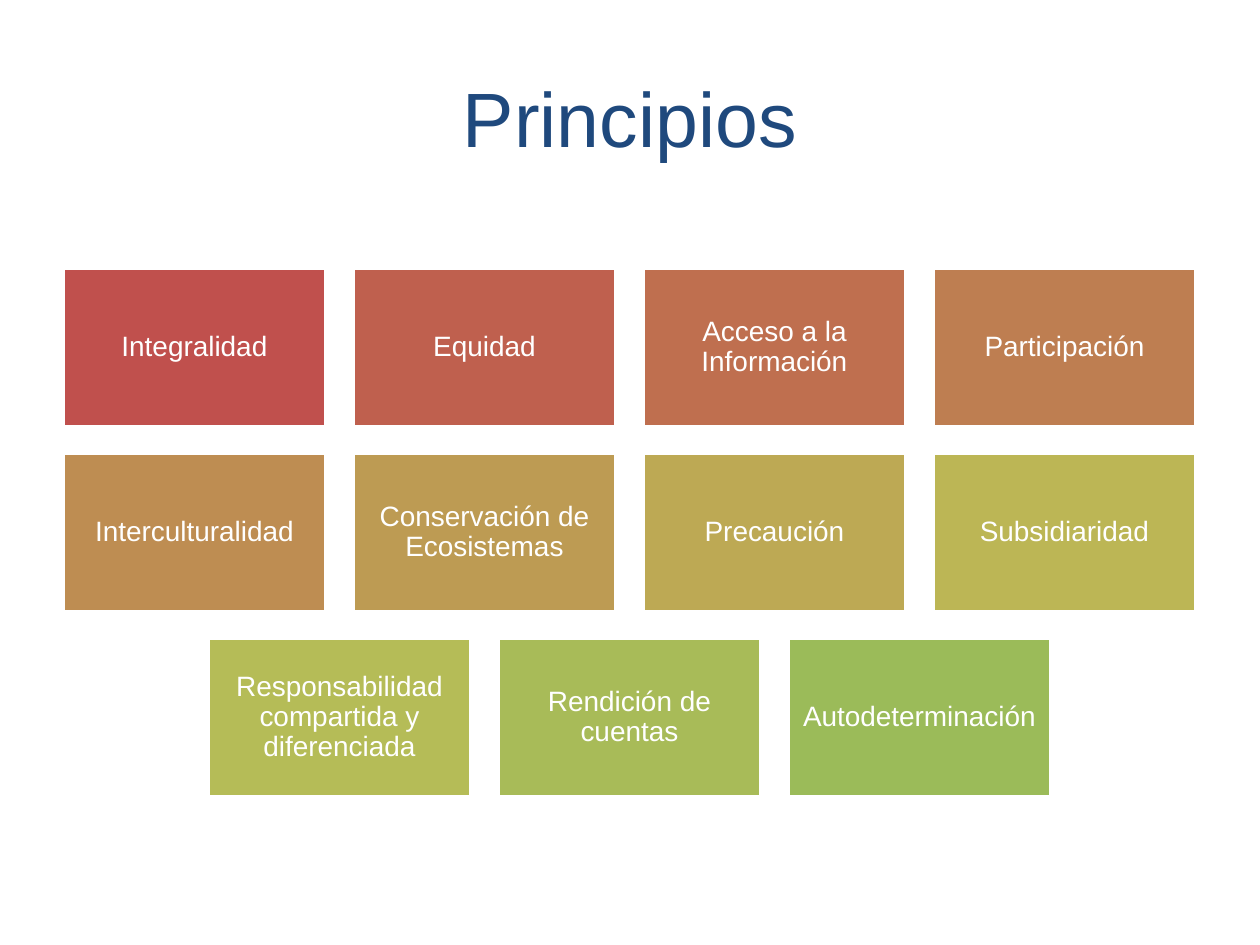
from pptx import Presentation
from pptx import util as u
from pptx.dml import color
from pptx.enum import shapes, text

EMU_PER_PX = 914400 / 126
SLIDE_WIDTH, SLIDE_HEIGHT = 1260, 945
TILE_WIDTH, TILE_HEIGHT = 263, 159
COLUMN_STEP, ROW_STEP = 290, 185
FIRST_ROW_TOP = 268
TILE_INSET = 9

PRINCIPLE_ROWS = [
    [
        ("Integralidad", "C0504D"),
        ("Equidad", "BF604E"),
        ("Acceso a la Información", "BF6F4F"),
        ("Participación", "BE7E51"),
    ],
    [
        ("Interculturalidad", "BE8D52"),
        ("Conservación de Ecosistemas", "BD9B53"),
        ("Precaución", "BDA954"),
        ("Subsidiaridad", "BCB655"),
    ],
    [
        ("Responsabilidad compartida y diferenciada", "B5BC57"),
        ("Rendición de cuentas", "A8BB58"),
        ("Autodeterminación", "9BBB59"),
    ],
]


def px(length):
    return u.Emu(round(length * EMU_PER_PX))


def rgb(hex_value):
    return color.RGBColor.from_string(hex_value)


def write_centred(frame, wording, size, hex_value):
    frame.word_wrap = True
    frame.vertical_anchor = text.MSO_ANCHOR.MIDDLE
    paragraph = frame.paragraphs[0]
    paragraph.alignment = text.PP_ALIGN.CENTER
    run = paragraph.add_run()
    run.text = wording
    run.font.name = "Arial"
    run.font.size = u.Pt(size)
    run.font.color.rgb = rgb(hex_value)
    return paragraph


def place_title(slide, wording):
    title = slide.shapes.title
    title.left, title.top = px(63), px(38)
    title.width, title.height = px(1134), px(157)
    write_centred(title.text_frame, wording, 44, "1F497D")


def add_tile(slide, left, top, principle, fill):
    tile = slide.shapes.add_shape(
        shapes.MSO_SHAPE.RECTANGLE, px(left), px(top), px(TILE_WIDTH), px(TILE_HEIGHT)
    )
    tile.shadow.inherit = False
    tile.fill.solid()
    tile.fill.fore_color.rgb = rgb(fill)
    tile.line.color.rgb = rgb("FFFFFF")
    tile.line.width = u.Pt(2)
    frame = tile.text_frame
    frame.margin_left = frame.margin_right = px(TILE_INSET)
    frame.margin_top = frame.margin_bottom = px(TILE_INSET)
    write_centred(frame, principle, 16, "FFFFFF").line_spacing = 0.9


def add_tile_row(slide, top, principles):
    row_width = (len(principles) - 1) * COLUMN_STEP + TILE_WIDTH
    row_left = (SLIDE_WIDTH - row_width) // 2
    for column, (principle, fill) in enumerate(principles):
        add_tile(slide, row_left + column * COLUMN_STEP, top, principle, fill)


def main():
    deck = Presentation()
    deck.slide_width, deck.slide_height = px(SLIDE_WIDTH), px(SLIDE_HEIGHT)
    slide = deck.slides.add_slide(deck.slide_layouts[5])
    place_title(slide, "Principios")
    for row, principles in enumerate(PRINCIPLE_ROWS):
        add_tile_row(slide, FIRST_ROW_TOP + row * ROW_STEP, principles)
    deck.save("out.pptx")


if __name__ == "__main__":
    main()
